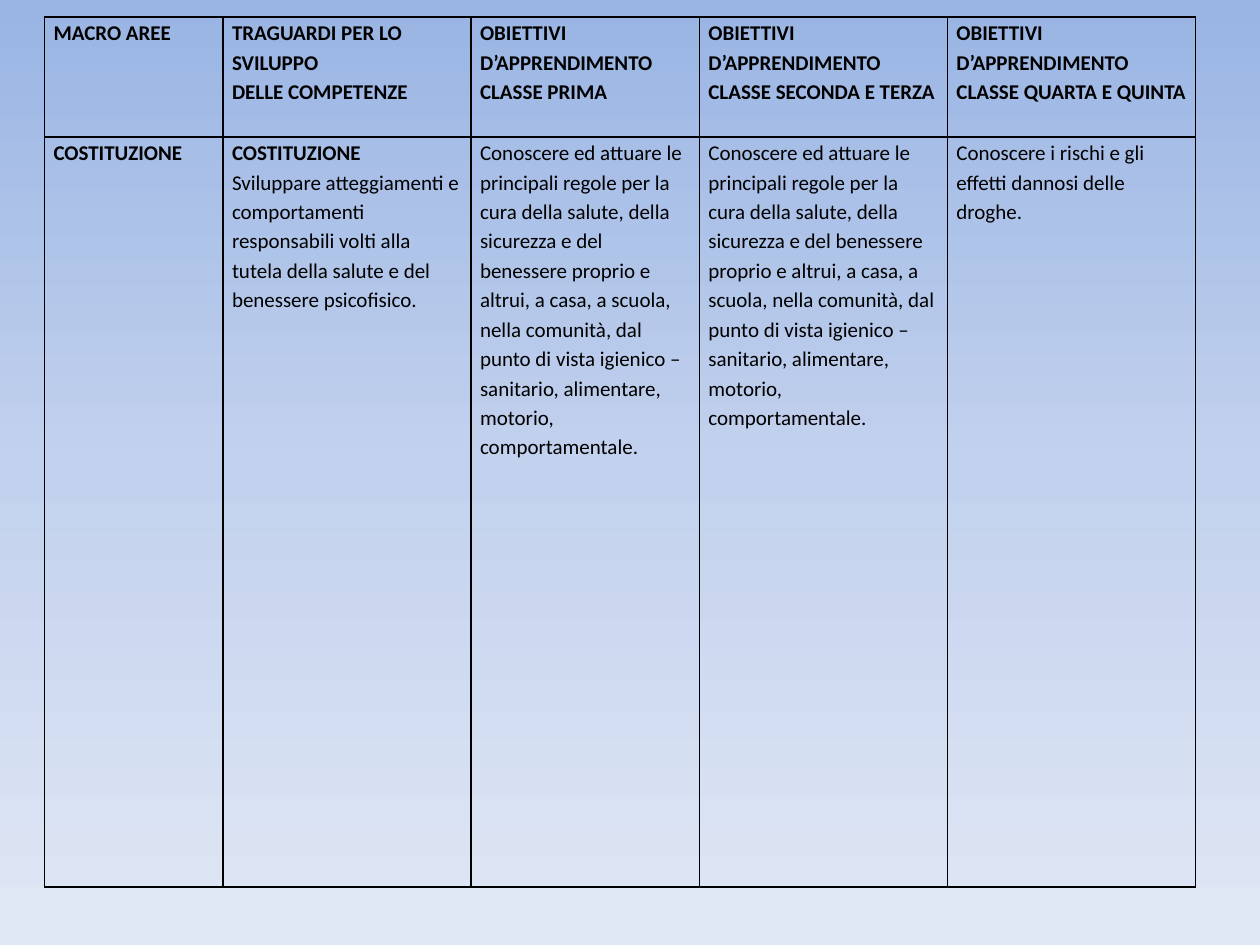
from dataclasses import dataclass

from lxml import etree
from pptx import Presentation
from pptx.dml.color import RGBColor
from pptx.oxml.ns import qn
from pptx.slide import Slide
from pptx.table import _Cell
from pptx.util import Pt


@dataclass(frozen=True)
class Theme:
    font: str = "Calibri"
    text_size: float = 12
    line_spacing: float = 1.15
    ink: str = "000000"
    border_width: float = 1
    side_margin: float = 5.1
    backdrop: tuple[tuple[int, str], ...] = ((0, "9AB5E4"), (50, "C2D1ED"), (100, "E1E8F5"))


@dataclass(frozen=True)
class Line:
    text: str
    bold: bool = False


@dataclass(frozen=True)
class Column:
    width: float
    heading: tuple[Line, ...]
    content: tuple[Line, ...]


THEME = Theme()
LEFT, TOP = 25.5, 9.75
HEADING_HEIGHT, CONTENT_HEIGHT = 68.5, 428.5
NARROW, MEDIUM, WIDE = 102, 130.5, 141.75
HEALTH_RULES = Line(
    "Conoscere ed attuare le principali regole per la cura della salute, della sicurezza "
    "e del benessere proprio e altrui, a casa, a scuola, nella comunità, dal punto di vista "
    "igienico –sanitario, alimentare, motorio, comportamentale."
)
CONSTITUTION = Line("COSTITUZIONE", bold=True)


def objectives(classes: str) -> tuple[Line, Line]:
    return Line("OBIETTIVI D’APPRENDIMENTO", bold=True), Line(f"CLASSE {classes}", bold=True)


COLUMNS = (
    Column(NARROW, (Line("MACRO AREE", bold=True),), (CONSTITUTION,)),
    Column(
        WIDE,
        (Line("TRAGUARDI PER LO SVILUPPO", bold=True), Line("DELLE COMPETENZE", bold=True)),
        (
            CONSTITUTION,
            Line(
                "Sviluppare atteggiamenti e comportamenti responsabili volti alla tutela "
                "della salute e del benessere psicofisico."
            ),
        ),
    ),
    Column(MEDIUM, objectives("PRIMA"), (HEALTH_RULES,)),
    Column(WIDE, objectives("SECONDA E TERZA"), (HEALTH_RULES,)),
    Column(
        WIDE,
        objectives("QUARTA E QUINTA"),
        (Line("Conoscere i rischi e gli effetti dannosi delle droghe."),),
    ),
)


def paint_backdrop(slide: Slide) -> None:
    """Fill the background with the theme's gradient, from top to bottom."""
    fill = slide.background.fill
    fill.gradient()
    fill.gradient_angle = 270
    stops = next(slide.element.iter(qn("a:gsLst")))
    for stop in list(stops):
        stops.remove(stop)
    for percent, color in THEME.backdrop:
        stop = etree.SubElement(stops, qn("a:gs"), pos=str(percent * 1000))
        etree.SubElement(stop, qn("a:srgbClr"), val=color)


def draw_borders(cell: _Cell) -> None:
    properties = cell._tc.get_or_add_tcPr()
    for side in ("a:lnL", "a:lnR", "a:lnT", "a:lnB"):
        border = etree.SubElement(properties, qn(side), w=str(Pt(THEME.border_width)))
        solid = etree.SubElement(border, qn("a:solidFill"))
        etree.SubElement(solid, qn("a:srgbClr"), val=THEME.ink)


def write_cell(cell: _Cell, lines: tuple[Line, ...]) -> None:
    draw_borders(cell)
    cell.fill.background()
    cell.margin_left = cell.margin_right = Pt(THEME.side_margin)
    cell.margin_top = cell.margin_bottom = Pt(0)
    frame = cell.text_frame
    for index, line in enumerate(lines):
        paragraph = frame.add_paragraph() if index else frame.paragraphs[0]
        paragraph.line_spacing = THEME.line_spacing
        run = paragraph.add_run()
        run.text = line.text
        run.font.name = THEME.font
        run.font.size = Pt(THEME.text_size)
        run.font.bold = line.bold
        run.font.color.rgb = RGBColor.from_string(THEME.ink)


def add_curriculum(slide: Slide) -> None:
    table = slide.shapes.add_table(
        2,
        len(COLUMNS),
        Pt(LEFT),
        Pt(TOP),
        Pt(sum(column.width for column in COLUMNS)),
        Pt(HEADING_HEIGHT + CONTENT_HEIGHT),
    ).table
    table.first_row = table.horz_banding = False
    table.rows[0].height = Pt(HEADING_HEIGHT)
    table.rows[1].height = Pt(CONTENT_HEIGHT)
    for index, column in enumerate(COLUMNS):
        table.columns[index].width = Pt(column.width)
        write_cell(table.cell(0, index), column.heading)
        write_cell(table.cell(1, index), column.content)


def main() -> None:
    presentation = Presentation()
    presentation.slide_width, presentation.slide_height = Pt(720), Pt(540)
    slide = presentation.slides.add_slide(presentation.slide_layouts[6])
    paint_backdrop(slide)
    add_curriculum(slide)
    presentation.save("out.pptx")


if __name__ == "__main__":
    main()
